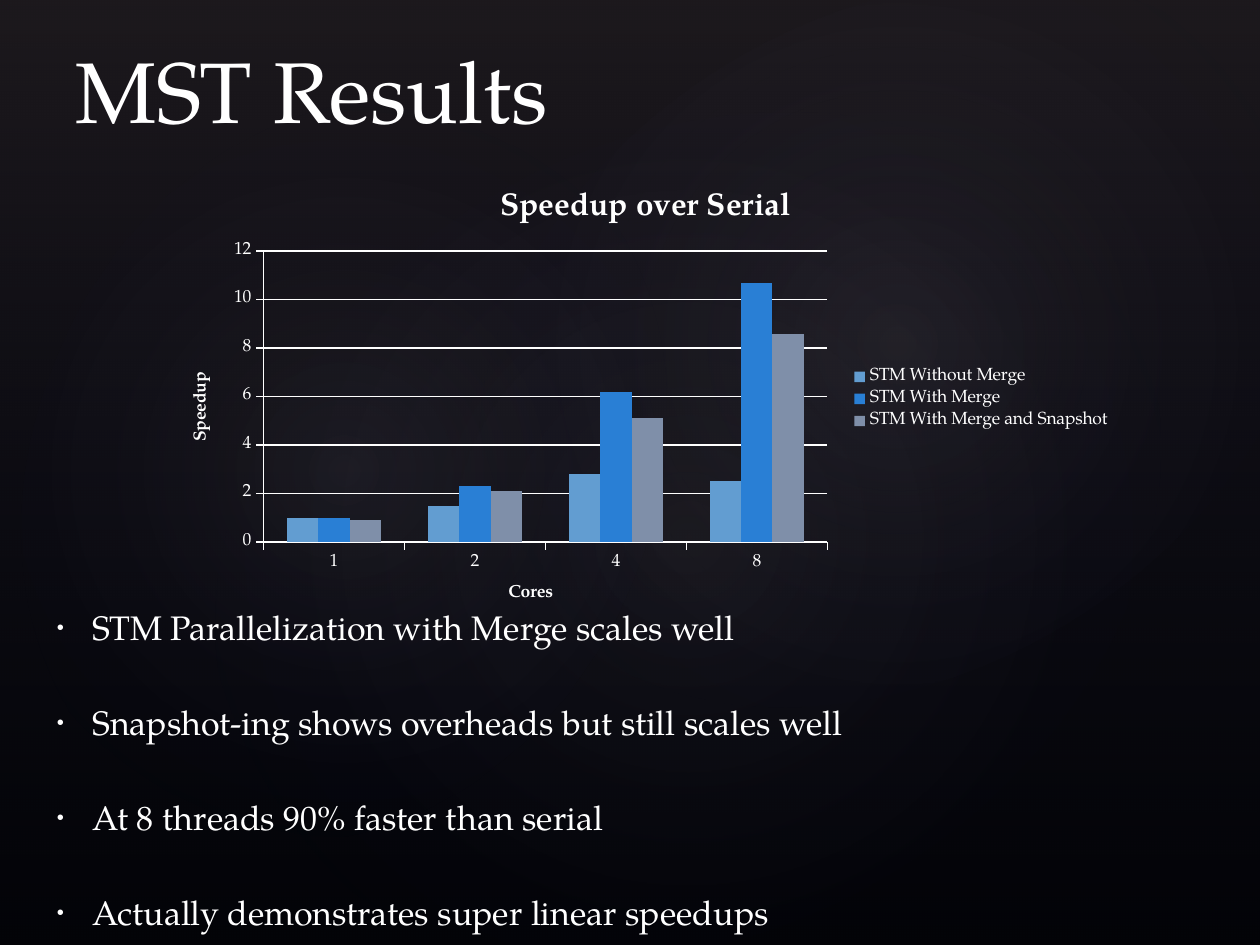
from typing import NamedTuple

from pptx import Presentation
from pptx.chart.data import CategoryChartData
from pptx.dml.color import RGBColor
from pptx.enum.chart import XL_CHART_TYPE, XL_LEGEND_POSITION, XL_TICK_MARK
from pptx.enum.shapes import MSO_SHAPE
from pptx.enum.text import MSO_ANCHOR
from pptx.oxml import parse_xml
from pptx.oxml.ns import nsdecls
from pptx.util import Pt

COLUMNS = XL_CHART_TYPE.COLUMN_CLUSTERED
LEGEND_RIGHT = XL_LEGEND_POSITION.RIGHT
TICK_OUTSIDE = XL_TICK_MARK.OUTSIDE
TICK_NONE = XL_TICK_MARK.NONE
RECTANGLE, OVAL = MSO_SHAPE.RECTANGLE, MSO_SHAPE.OVAL
BOTTOM, MIDDLE = MSO_ANCHOR.BOTTOM, MSO_ANCHOR.MIDDLE

FONT = "TeX Gyre Pagella"
WHITE = "FFFFFF"
BODY_SIZE = 19.4
LINEAR_DOWN = '<a:lin ang="5400000" scaled="0"/>'
RADIAL = ('<a:path path="circle"><a:fillToRect l="50000" t="50000" '
          'r="50000" b="50000"/></a:path>')


class Box(NamedTuple):
    left: float
    top: float
    width: float
    height: float


class Stop(NamedTuple):
    position: int
    color: str
    opacity: int


class Glow(NamedTuple):
    box: Box
    rotation: float
    opacity: int


class Series(NamedTuple):
    name: str
    values: tuple[float, ...]
    color: str


SLIDE = Box(0, 0, 720, 540)
GLOWS = (
    Glow(Box(108, 82.1, 570.2, 449.3), 328.7, 7),
    Glow(Box(-21.6, 92.2, 436.3, 352.8), 294.3, 8),
    Glow(Box(257.8, 9.4, 510.5, 374.4), 328.7, 8),
)
CORES = ("1", "2", "4", "8")
SPEEDUPS = (
    Series("STM Without Merge", (1, 1.5, 2.8, 2.5), "629DD1"),
    Series("STM With Merge", (1, 2.3, 6.2, 10.7), "297FD5"),
    Series("STM With Merge and Snapshot", (0.9, 2.1, 5.1, 8.6), "7F8FA9"),
)
FINDINGS = (
    "STM Parallelization with Merge scales well",
    "Snapshot-ing shows overheads but still scales well",
    "At 8 threads 90% faster than serial",
    "Actually demonstrates super linear speedups",
)


def rgb(color: str) -> RGBColor:
    return RGBColor.from_string(color)


def place(box: Box) -> tuple[Pt, ...]:
    return tuple(Pt(length) for length in box)


def style_font(font, size: float, bold: bool = False) -> None:
    font.name, font.size, font.bold = FONT, Pt(size), bold
    font.color.rgb = rgb(WHITE)


def add_gradient(slide, kind, box: Box, stops: tuple[Stop, ...],
                 direction: str, rotation: float = 0) -> None:
    """Add an unlined shape filled with a translucent gradient."""
    shape = slide.shapes.add_shape(kind, *place(box))
    shape.rotation = rotation
    shape.shadow.inherit = False
    shape.line.fill.background()
    stop_xml = "".join(
        f'<a:gs pos="{stop.position * 1000}"><a:srgbClr val="{stop.color}">'
        f'<a:alpha val="{stop.opacity * 1000}"/></a:srgbClr></a:gs>'
        for stop in stops)
    gradient = parse_xml(
        f'<a:gradFill {nsdecls("a")} rotWithShape="1">'
        f'<a:gsLst>{stop_xml}</a:gsLst>{direction}</a:gradFill>')
    shape._element.spPr.prstGeom.addnext(gradient)


def add_text_frame(slide, box: Box, anchor):
    frame = slide.shapes.add_textbox(*place(box)).text_frame
    frame.word_wrap = True
    frame.vertical_anchor = anchor
    return frame


def add_title(slide, text: str) -> None:
    title = add_text_frame(slide, Box(36, 12, 594, 72), BOTTOM).paragraphs[0]
    title.text = text
    style_font(title.font, 49)


def add_findings(slide, findings: tuple[str, ...]) -> None:
    frame = add_text_frame(slide, Box(24, 355.7, 672, 168), MIDDLE)
    for index, finding in enumerate(findings):
        bullet = frame.paragraphs[0] if index == 0 else frame.add_paragraph()
        bullet.text = finding
        bullet.space_before = Pt(31 if index else 3.9)
        style_font(bullet.font, BODY_SIZE)
        properties = bullet._p.get_or_add_pPr()
        properties.set("marL", str(Pt(21.6)))
        properties.set("indent", str(Pt(-20.2)))
        for xml in ('<a:buSzPct {} val="60000"/>',
                    '<a:buFont {} typeface="Arial"/>',
                    '<a:buChar {} char="•"/>'):
            properties.insert_element_before(
                parse_xml(xml.format(nsdecls("a"))), "a:tabLst", "a:defRPr")


def set_heading(owner, text: str, size: float) -> None:
    """Give a chart or an axis a bold title."""
    heading = owner.chart_title if hasattr(owner, "chart_title") else owner.axis_title
    paragraph = heading.text_frame.paragraphs[0]
    paragraph.text = text
    style_font(paragraph.font, size, bold=True)


def style_line(line) -> None:
    line.color.rgb = rgb(WHITE)
    line.width = Pt(0.75)


def add_speedup_chart(slide) -> None:
    data = CategoryChartData()
    data.categories = CORES
    for series in SPEEDUPS:
        data.add_series(series.name, series.values)
    chart = slide.shapes.add_chart(
        COLUMNS, *place(Box(96, 96, 546, 264)), data).chart
    style_font(chart.font, 10)
    set_heading(chart, "Speedup over Serial", 18)

    chart.has_legend = True
    chart.legend.position = LEGEND_RIGHT
    chart.legend.include_in_layout = False

    for axis, name in ((chart.category_axis, "Cores"),
                       (chart.value_axis, "Speedup")):
        set_heading(axis, name, 10)
        axis.major_tick_mark = TICK_OUTSIDE
        axis.minor_tick_mark = TICK_NONE
        style_line(axis.format.line)
    speedup_axis = chart.value_axis
    speedup_axis.minimum_scale, speedup_axis.maximum_scale = 0, 12
    speedup_axis.major_unit = 2
    speedup_axis.has_major_gridlines = True
    style_line(speedup_axis.major_gridlines.format.line)

    plot = chart.plots[0]
    plot.gap_width, plot.overlap = 150, 0
    plot.vary_by_categories = False
    for drawn, series in zip(plot.series, SPEEDUPS):
        drawn.format.fill.solid()
        drawn.format.fill.fore_color.rgb = rgb(series.color)

    plot_area = chart._chartSpace.chart.plotArea
    for old_layout in plot_area.findall("{*}layout"):
        plot_area.remove(old_layout)
    plot_area.insert(0, parse_xml(
        f'<c:layout {nsdecls("c")}><c:manualLayout>'
        '<c:layoutTarget val="inner"/><c:xMode val="edge"/><c:yMode val="edge"/>'
        '<c:x val="0.1"/><c:y val="0.18"/><c:w val="0.59"/><c:h val="0.63"/>'
        '</c:manualLayout></c:layout>'))


def main() -> None:
    presentation = Presentation()
    presentation.slide_width = Pt(SLIDE.width)
    presentation.slide_height = Pt(SLIDE.height)
    slide = presentation.slides.add_slide(presentation.slide_layouts[6])
    slide.background.fill.solid()
    slide.background.fill.fore_color.rgb = rgb("000000")

    add_gradient(slide, RECTANGLE, SLIDE,
                 (Stop(0, "504652", 36), Stop(100, "242852", 10)), LINEAR_DOWN)
    for glow in GLOWS:
        add_gradient(slide, OVAL, glow.box,
                     (Stop(0, "C4BCC6", glow.opacity), Stop(58, "242852", 0)),
                     RADIAL, glow.rotation)
    add_title(slide, "MST Results")
    add_findings(slide, FINDINGS)
    add_speedup_chart(slide)
    presentation.save("out.pptx")


if __name__ == "__main__":
    main()
